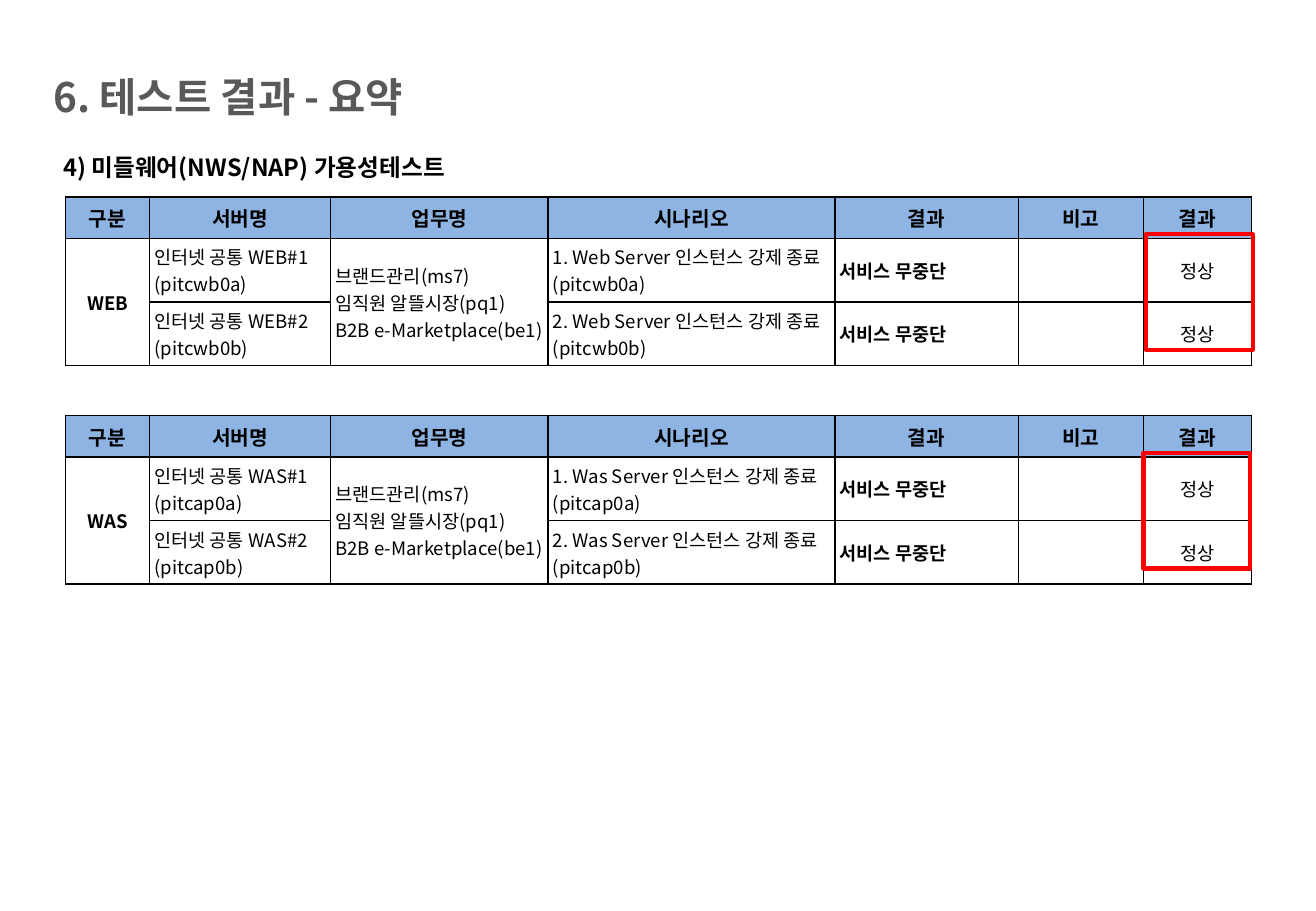
"""Build the middleware availability test summary slide."""
from dataclasses import dataclass

from lxml import etree
from pptx import Presentation
from pptx.dml.color import RGBColor
from pptx.enum.shapes import MSO_SHAPE
from pptx.enum.text import MSO_ANCHOR, PP_ALIGN
from pptx.oxml.ns import qn
from pptx.util import Inches, Pt

RECTANGLE = MSO_SHAPE.RECTANGLE
TOP, MIDDLE = MSO_ANCHOR.TOP, MSO_ANCHOR.MIDDLE
LEFT, CENTER = PP_ALIGN.LEFT, PP_ALIGN.CENTER

SLIDE_WIDTH, SLIDE_HEIGHT = Inches(10.83), Inches(7.5)
FONT = "Noto Sans CJK KR"
BLACK, GREY, WHITE = "000000", "595959", "FFFFFF"
HEADER_BLUE, RED = "8EB4E3", "FF0000"

TABLE_LEFT = 4.99
COLUMN_SHARES = (6.37, 13.76, 16.53, 21.79, 13.94, 9.51, 8.22)
ROW_SHARES = (4, 6.4, 6.4)
HEADERS = ("구분", "서버명", "업무명", "시나리오", "결과", "비고", "결과")
SERVICES = "브랜드관리(ms7)\n임직원 알뜰시장(pq1)\nB2B e-Marketplace(be1)"
CENTERED_COLUMNS = (0, 6)
BOLD_COLUMNS = (0, 4)
MERGED_COLUMNS = (0, 2)


@dataclass(frozen=True)
class ServerTest:
    """One tested server type, with places in percent of the slide."""
    tier: str
    server: str
    hosts: tuple[str, str]
    top: float
    frame_left: float


SERVER_TESTS = (
    ServerTest("WEB", "Web", ("pitcwb0a", "pitcwb0b"), 21.6, 87.07),
    ServerTest("WAS", "Was", ("pitcap0a", "pitcap0b"), 45.6, 86.89),
)


def across(percent: float) -> int:
    """Return a share of the slide's width."""
    return round(SLIDE_WIDTH * percent / 100)


def down(percent: float) -> int:
    """Return a share of the slide's height."""
    return round(SLIDE_HEIGHT * percent / 100)


def color(value: str) -> RGBColor:
    """Turn a hex string into a colour."""
    return RGBColor.from_string(value)


def format_text(text_frame, size: float, bold: bool, hex_color: str = BLACK,
                alignment=LEFT) -> None:
    """Format every run of a text frame."""
    for paragraph in text_frame.paragraphs:
        paragraph.alignment = alignment
        for run in paragraph.runs:
            run.font.size = Pt(size)
            run.font.bold = bold
            run.font.name = FONT
            run.font.color.rgb = color(hex_color)
            latin = run.font._element.find(qn("a:latin"))
            east_asian = etree.Element(qn("a:ea"), typeface=FONT)
            latin.addnext(east_asian)


def place(shape, left: float, top: float, width: float, height: float) -> None:
    """Move and size a placeholder in percent of the slide."""
    shape.left, shape.top = across(left), down(top)
    shape.width, shape.height = across(width), down(height)


def add_title(slide) -> None:
    """Fill the title placeholder."""
    title = slide.shapes.title
    place(title, 3.14, 3.73, 74.42, 9.73)
    text_frame = title.text_frame
    text_frame.text = "6. 테스트 결과 - 요약"
    text_frame.vertical_anchor = TOP
    text_frame.margin_top, text_frame.margin_bottom = down(4.13), 0
    format_text(text_frame, 24, True, GREY)


def add_heading(slide) -> None:
    """Fill the body placeholder with the section heading."""
    body = slide.placeholders[1]
    place(body, 3.51, 14.53, 91.5, 6)
    text_frame = body.text_frame
    text_frame.text = "4) 미들웨어(NWS/NAP) 가용성테스트"
    text_frame.vertical_anchor = TOP
    text_frame.margin_left = across(1.3)
    paragraph = text_frame.paragraphs[0]
    properties = paragraph._p.get_or_add_pPr()
    properties.set("marL", "0")
    properties.set("indent", "0")
    etree.SubElement(properties, qn("a:buNone"))
    paragraph.line_spacing = 1.5
    paragraph.space_before = Pt(0)
    format_text(text_frame, 14, True)


def add_borders(cell) -> None:
    """Draw a thin black line on each side of a cell."""
    properties = cell._tc.get_or_add_tcPr()
    for side in ("lnL", "lnR", "lnT", "lnB"):
        line = etree.SubElement(properties, qn(f"a:{side}"), w=str(Pt(1)))
        fill = etree.SubElement(line, qn("a:solidFill"))
        etree.SubElement(fill, qn("a:srgbClr"), val=BLACK)


def fill_cell(cell, text: str, is_header: bool, column: int) -> None:
    """Write and format one table cell."""
    add_borders(cell)
    cell.fill.solid()
    cell.fill.fore_color.rgb = color(HEADER_BLUE if is_header else WHITE)
    cell.vertical_anchor = MIDDLE
    cell.margin_left = cell.margin_right = Inches(0.1 if is_header else 0.04)
    cell.margin_top = cell.margin_bottom = Inches(0.05 if is_header else 0.04)
    cell.text_frame.text = text
    centered = is_header or column in CENTERED_COLUMNS
    bold = is_header or column in BOLD_COLUMNS
    format_text(cell.text_frame, 12 if is_header else 11, bold,
                alignment=CENTER if centered else LEFT)


def table_rows(test: ServerTest) -> list[tuple[str, ...]]:
    """Return the header and one row for each host."""
    rows = [HEADERS]
    for number, host in enumerate(test.hosts, start=1):
        is_first = number == 1
        rows.append((
            test.tier if is_first else "",
            f"인터넷 공통 {test.tier}#{number}\n({host})",
            SERVICES if is_first else "",
            f"{number}. {test.server} Server 인스턴스 강제 종료({host})",
            "서비스 무중단", "", "정상",
        ))
    return rows


def add_test_table(slide, test: ServerTest) -> None:
    """Add the result table of one server type."""
    table = slide.shapes.add_table(
        len(ROW_SHARES), len(COLUMN_SHARES), across(TABLE_LEFT), down(test.top),
        across(sum(COLUMN_SHARES)), down(sum(ROW_SHARES))).table
    for column, share in zip(table.columns, COLUMN_SHARES):
        column.width = across(share)
    for row, share in zip(table.rows, ROW_SHARES):
        row.height = down(share)
    for row_index, texts in enumerate(table_rows(test)):
        for column_index, text in enumerate(texts):
            fill_cell(table.cell(row_index, column_index), text,
                      row_index == 0, column_index)
    for column_index in MERGED_COLUMNS:
        table.cell(1, column_index).merge(table.cell(2, column_index))


def add_result_frame(slide, test: ServerTest) -> None:
    """Frame the result cells in red."""
    frame = slide.shapes.add_shape(
        RECTANGLE, across(test.frame_left), down(test.top + ROW_SHARES[0] + 0.13),
        across(8.13), down(12.67))
    frame.shadow.inherit = False
    frame.fill.background()
    frame.line.color.rgb = color(RED)
    frame.line.width = Pt(2.5)


def main() -> None:
    """Build and save the presentation."""
    presentation = Presentation()
    presentation.slide_width, presentation.slide_height = SLIDE_WIDTH, SLIDE_HEIGHT
    slide = presentation.slides.add_slide(presentation.slide_layouts[1])
    add_title(slide)
    add_heading(slide)
    for test in SERVER_TESTS:
        add_test_table(slide, test)
    for test in SERVER_TESTS:
        add_result_frame(slide, test)
    presentation.save("out.pptx")


if __name__ == "__main__":
    main()
